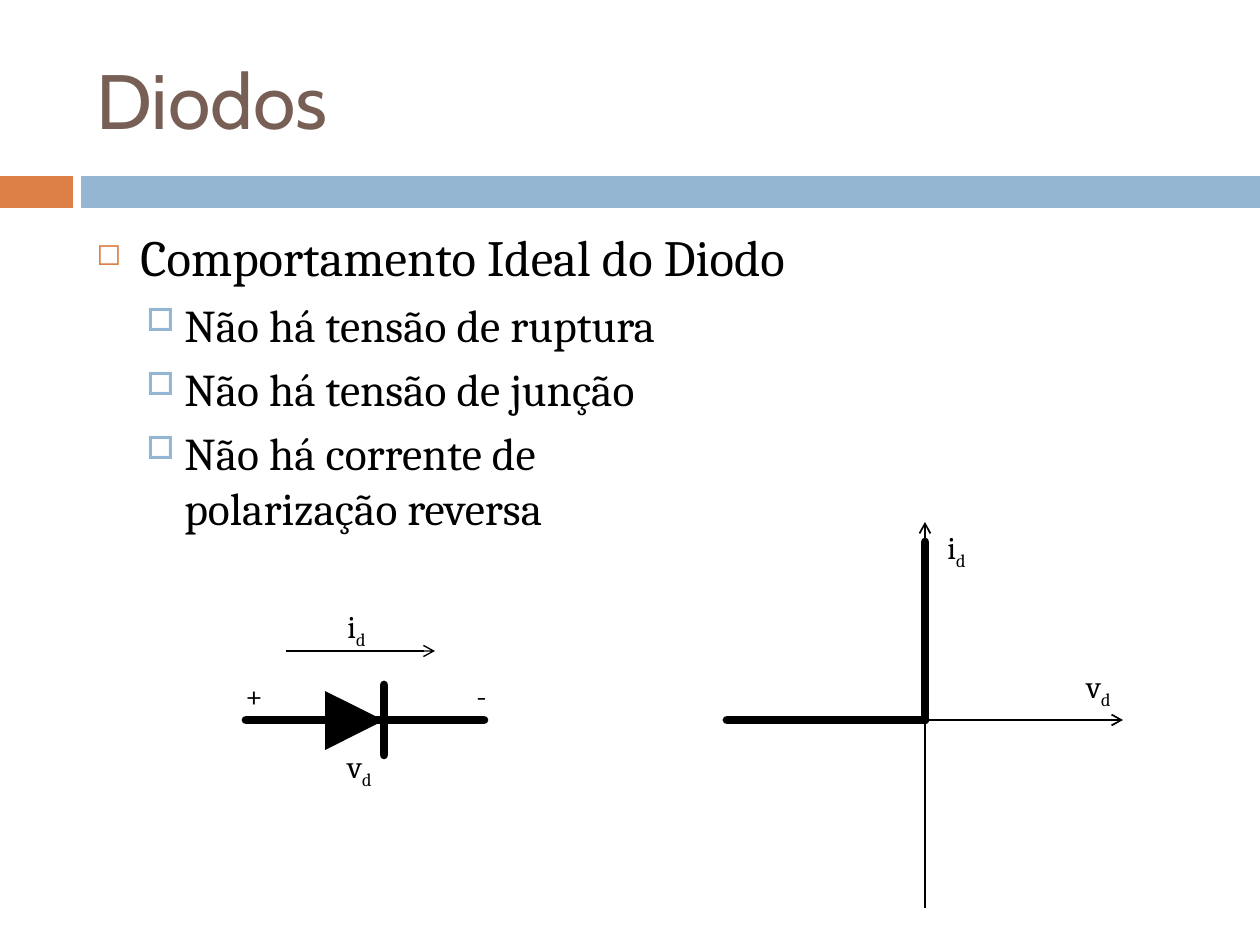
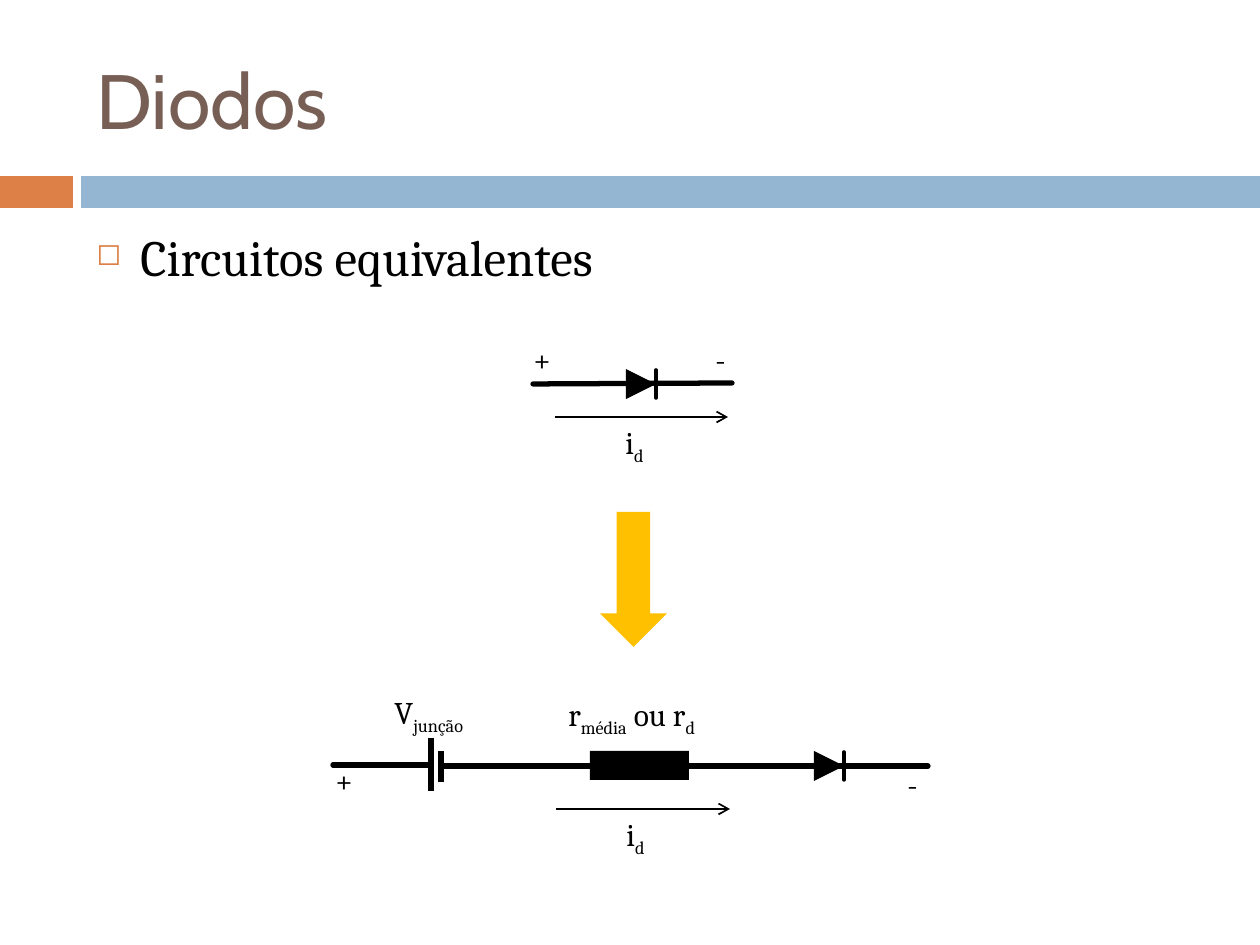
from dataclasses import dataclass

from lxml.etree import SubElement
from pptx import Presentation
from pptx.dml.color import RGBColor
from pptx.enum.shapes import MSO_CONNECTOR as Conn, MSO_SHAPE as Shape
from pptx.enum.text import MSO_ANCHOR as Anchor, MSO_AUTO_SIZE as AutoSize
from pptx.oxml.ns import qn
from pptx.util import Pt

# Scale: 126 px to the inch
EMU_PER_PX = 914400 / 126

# Shared look
BLACK = RGBColor(0x00, 0x00, 0x00)
BROWN = RGBColor(0x77, 0x5F, 0x55)
ORANGE = RGBColor(0xDD, 0x80, 0x47)
BLUE = RGBColor(0x94, 0xB6, 0xD2)
YELLOW = RGBColor(0xFF, 0xC0, 0x00)
TITLE_FONT = "Cabin"
BODY_FONT = "Cambria"
LABEL_HEIGHT = 50


@dataclass(frozen=True)
class Box:
    x: int
    y: int
    w: int
    h: int

    def emu(self) -> tuple:
        return tuple(px(v) for v in (self.x, self.y, self.w, self.h))


@dataclass(frozen=True)
class Line:
    x1: int
    y1: int
    x2: int
    y2: int
    width: float = 1
    arrow: bool = False
    round_cap: bool = False


@dataclass(frozen=True)
class Label:
    x: int
    y: int
    w: int
    text: str  # every second part between underscores is a subscript


@dataclass(frozen=True)
class Diode:
    bar_x: int
    y: int
    size: int
    half_bar: int
    width: float


@dataclass(frozen=True)
class Level:
    size: float
    indent: int
    hanging: int
    before: float
    bullet: str
    color: RGBColor
    percent: int


TITLE_BOX = Box(84, 31, 1124, 136)
BODY_BOX = Box(84, 220, 1124, 659)
BANDS = ((Box(0, 176, 73, 32), ORANGE), (Box(81, 176, 1179, 32), BLUE))
LEVELS = (
    Level(29, 44, 44, 7, "◻", ORANGE, 60),
    Level(26, 88, 38, 5.5, "□", BLUE, 70),
)


def px(value: float) -> int:
    return round(value * EMU_PER_PX)


# Text
def write_text(p, text: str, *, size: float = 18, font: str = BODY_FONT,
               color: RGBColor = BLACK) -> None:
    for i, part in enumerate(text.split("_")):
        for j, piece in enumerate(part.split("\n")):
            if j:
                p.add_line_break()
            r = p.add_run()
            r.text = piece
            r.font.size, r.font.name = Pt(size), font
            r.font.color.rgb = color
            if i % 2:
                r.font._element.set("baseline", "-25000")


def add_frame(shapes, box: Box, wrap: bool = True):
    tf = shapes.add_textbox(*box.emu()).text_frame
    tf.word_wrap = wrap
    return tf


def add_label(shapes, label: Label) -> None:
    tf = add_frame(shapes, Box(label.x, label.y, label.w, LABEL_HEIGHT), wrap=False)
    tf.auto_size = AutoSize.SHAPE_TO_FIT_TEXT
    write_text(tf.paragraphs[0], label.text)


def add_bullet(p, text: str, level: Level) -> None:
    p.space_before = Pt(level.before)
    pPr = p._p.get_or_add_pPr()
    pPr.set("marL", str(px(level.indent)))
    pPr.set("indent", str(-px(level.hanging)))
    clr = SubElement(pPr, qn("a:buClr"))
    SubElement(clr, qn("a:srgbClr"), val=str(level.color))
    SubElement(pPr, qn("a:buSzPct"), val=str(level.percent * 1000))
    SubElement(pPr, qn("a:buChar"), char=level.bullet)
    write_text(p, text, size=level.size)


# Shapes and lines
def add_filled(shapes, kind, box: Box, color: RGBColor = BLACK, rotation: int = 0) -> None:
    sp = shapes.add_shape(kind, *box.emu())
    sp.shadow.inherit = False
    sp.fill.solid()
    sp.fill.fore_color.rgb = color
    sp.line.fill.background()
    sp.rotation = rotation


def add_line(shapes, line: Line) -> None:
    ends = (px(v) for v in (line.x1, line.y1, line.x2, line.y2))
    cxn = shapes.add_connector(Conn.STRAIGHT, *ends)
    cxn.line.color.rgb = BLACK
    cxn.line.width = Pt(line.width)
    ln = cxn.line._get_or_add_ln()
    if line.round_cap:
        ln.set("cap", "rnd")
    if line.arrow:
        SubElement(ln, qn("a:tailEnd"), type="arrow")
    SubElement(cxn._element.spPr, qn("a:effectLst"))


def add_diode(shapes, d: Diode) -> None:
    box = Box(d.bar_x - d.size, d.y - d.size // 2, d.size, d.size)
    add_filled(shapes, Shape.ISOSCELES_TRIANGLE, box, rotation=90)
    add_line(shapes, Line(d.bar_x, d.y - d.half_bar, d.bar_x, d.y + d.half_bar,
                          d.width, round_cap=True))


def add_drawing(s, items: tuple) -> None:
    shapes = s.shapes.add_group_shape().shapes
    draw = {Line: add_line, Diode: add_diode, Label: add_label}
    for item in items:
        if isinstance(item, Box):
            add_filled(shapes, Shape.RECTANGLE, item)
        else:
            draw[type(item)](shapes, item)


def add_slide(prs, title: str, bullets: tuple):
    s = prs.slides.add_slide(prs.slide_layouts[6])
    for box, color in BANDS:
        add_filled(s.shapes, Shape.RECTANGLE, box, color)
    tf = add_frame(s.shapes, TITLE_BOX)
    tf.vertical_anchor = Anchor.MIDDLE
    write_text(tf.paragraphs[0], title, size=44, font=TITLE_FONT, color=BROWN)
    tf = add_frame(s.shapes, BODY_BOX)
    for i, (level, text) in enumerate(bullets):
        p = tf.add_paragraph() if i else tf.paragraphs[0]
        add_bullet(p, text, LEVELS[level])
    return s


# Slide 1: ideal characteristic and diode symbol
IDEAL_CURVE = (
    Line(727, 720, 1123, 720, arrow=True),
    Line(925, 908, 925, 522, arrow=True),
    Line(727, 720, 925, 720, 5, round_cap=True),
    Line(925, 542, 925, 720, 5, round_cap=True),
    Label(935, 522, 47, "i_d"),
    Label(1074, 661, 52, "v_d"),
)
DIODE_SYMBOL = (
    Line(246, 720, 484, 720, 5, round_cap=True),
    Diode(384, 720, 59, 35, 5),
    Label(335, 741, 52, "v_d"),
    Label(464, 670, 36, "-"),
    Label(233, 670, 43, "+"),
    Line(286, 651, 435, 651, 0.79, arrow=True),
    Label(335, 601, 47, "i_d"),
)

# Slide 2: diode and its equivalent circuit
EQUIVALENT_CIRCUIT = (
    Line(441, 766, 928, 766, 3, round_cap=True),
    Diode(844, 766, 30, 14, 2),
    Line(431, 738, 431, 791, 3),
    Line(441, 751, 441, 782, 3),
    Box(590, 751, 99, 29),
    Label(382, 687, 108, "V_junção"),
    Label(556, 689, 173, "r_média_ ou r_d"),
    Line(333, 765, 431, 765, 3, round_cap=True),
    Line(556, 809, 730, 809, arrow=True),
    Label(614, 809, 47, "i_d"),
    Label(323, 755, 43, "+"),
    Label(895, 759, 36, "-"),
)
SINGLE_DIODE = (
    Line(533, 384, 732, 383, 3, round_cap=True),
    Diode(656, 384, 30, 14, 2),
    Line(555, 417, 728, 417, arrow=True),
    Label(613, 417, 47, "i_d"),
    Label(521, 334, 43, "+"),
    Label(703, 334, 36, "-"),
)


def main() -> None:
    prs = Presentation()
    prs.slide_width, prs.slide_height = px(1260), px(945)

    s = add_slide(prs, "Diodos", (
        (0, "Comportamento Ideal do Diodo"),
        (1, "Não há tensão de ruptura"),
        (1, "Não há tensão de junção"),
        (1, "Não há corrente de\npolarização reversa"),
    ))
    add_drawing(s, IDEAL_CURVE)
    add_drawing(s, DIODE_SYMBOL)

    s = add_slide(prs, "Diodos", ((0, "Circuitos equivalentes"),))
    add_drawing(s, EQUIVALENT_CIRCUIT)
    add_drawing(s, SINGLE_DIODE)
    add_filled(s.shapes, Shape.DOWN_ARROW, Box(600, 512, 67, 135), YELLOW)

    prs.save("out.pptx")


if __name__ == "__main__":
    main()
